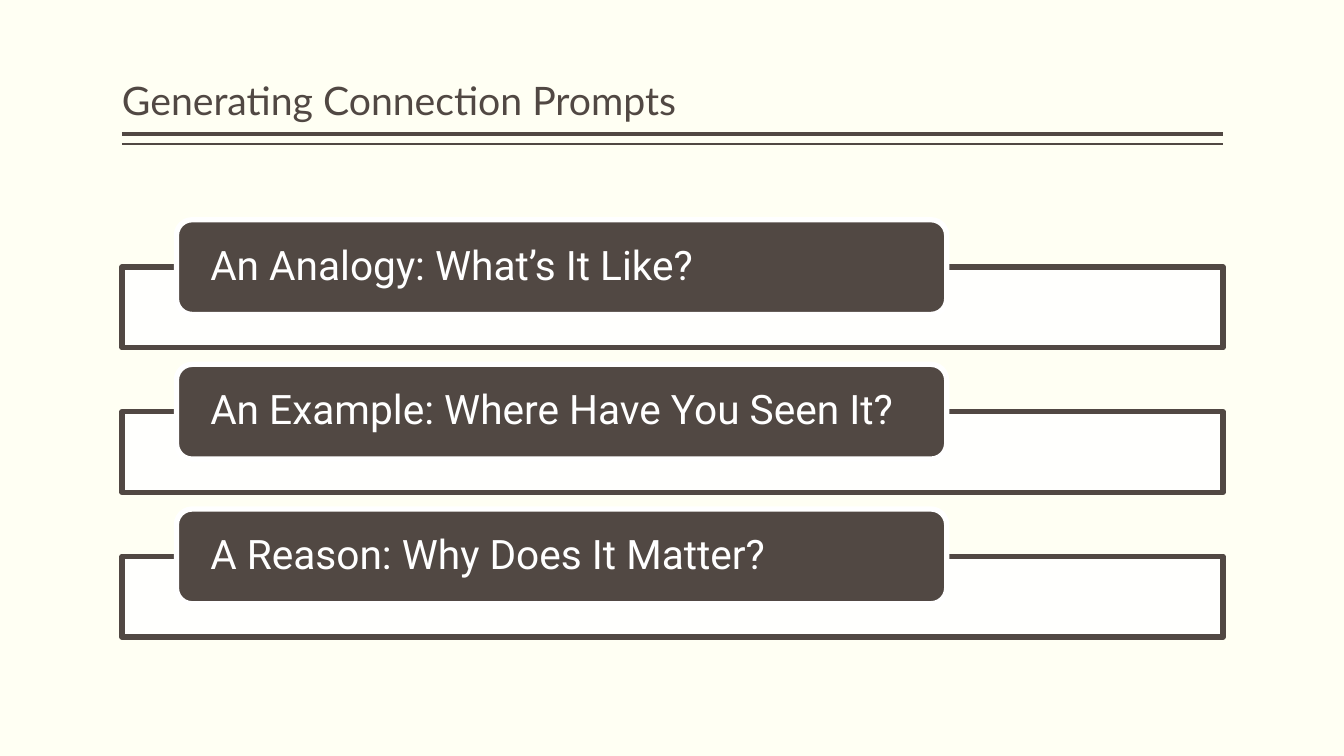
import dataclasses

import lxml.etree
import pptx
import pptx.dml.color
import pptx.enum.shapes
import pptx.enum.text
import pptx.oxml.ns
import pptx.shapes.autoshape
import pptx.slide
import pptx.text.text
import pptx.util

Inches = pptx.util.Inches
Pt = pptx.util.Pt
RGB = pptx.dml.color.RGBColor
Shape = pptx.enum.shapes.MSO_SHAPE
Anchor = pptx.enum.text.MSO_ANCHOR
qn = pptx.oxml.ns.qn


@dataclasses.dataclass(frozen=True)
class Theme:
    background: RGB = RGB(0xFF, 0xFF, 0xF3)
    dark: RGB = RGB(0x51, 0x48, 0x43)
    white: RGB = RGB(0xFF, 0xFF, 0xFF)
    title_font: str = "Lato"
    prompt_font: str = "Roboto"
    title_size: int = 28
    prompt_size: int = 29
    outline: float = 3.78


@dataclasses.dataclass(frozen=True)
class Rule:
    top: float
    weight: float


THEME = Theme()
LEFT, WIDTH = 1.21, 10.92
FIRST_TOP, PITCH = 2.18, 1.435
PANEL_DROP = 0.47
TITLE = "Generating Connection Prompts"
RULES = [Rule(1.33, 3), Rule(1.43, 1)]
PROMPTS = [
    "An Analogy: What’s It Like?",
    "An Example: Where Have You Seen It?",
    "A Reason: Why Does It Matter?",
]


def set_text(tf: pptx.text.text.TextFrame, text: str, font: str, size: int,
             color: RGB, anchor: Anchor, inset_x: float, inset_y: float) -> None:
    tf.word_wrap = True
    tf.vertical_anchor = anchor
    tf.margin_left = tf.margin_right = Inches(inset_x)
    tf.margin_top = tf.margin_bottom = Inches(inset_y)
    p = tf.paragraphs[0]
    p.text = text
    p.alignment = pptx.enum.text.PP_ALIGN.LEFT
    p.line_spacing = 0.9
    p.font.name = font
    p.font.size = Pt(size)
    p.font.color.rgb = color


def add_title(s: pptx.slide.Slide) -> None:
    box = s.shapes.add_textbox(Inches(LEFT), Inches(0.08), Inches(WIDTH), Inches(1.2))
    set_text(box.text_frame, TITLE, THEME.title_font, THEME.title_size,
             THEME.dark, Anchor.BOTTOM, 0, 0.05)


def add_rule(s: pptx.slide.Slide, rule: Rule) -> None:
    line = s.shapes.add_connector(
        pptx.enum.shapes.MSO_CONNECTOR.STRAIGHT,
        Inches(LEFT), Inches(rule.top), Inches(LEFT + WIDTH), Inches(rule.top))
    line.line.color.rgb = THEME.dark
    line.line.width = Pt(rule.weight)
    lxml.etree.SubElement(line._element.spPr, qn("a:effectLst"))


def add_block(s: pptx.slide.Slide, kind: Shape, left: float, top: float, width: float,
              height: float, fill: RGB, line: RGB) -> pptx.shapes.autoshape.Shape:
    sp = s.shapes.add_shape(kind, Inches(left), Inches(top), Inches(width), Inches(height))
    sp.shadow.inherit = False
    sp.fill.solid()
    sp.fill.fore_color.rgb = fill
    sp.line.color.rgb = line
    sp.line.width = Pt(THEME.outline)
    return sp


def add_prompt(s: pptx.slide.Slide, text: str, top: float) -> None:
    """Draw a translucent panel with the prompt's label over its upper edge."""
    panel = add_block(s, Shape.RECTANGLE, LEFT, top + PANEL_DROP, WIDTH, 0.8,
                      THEME.white, THEME.dark)
    color = panel._element.spPr.find(qn("a:solidFill")).find(qn("a:srgbClr"))
    lxml.etree.SubElement(color, qn("a:alpha"), val="90000")
    label = add_block(s, Shape.ROUNDED_RECTANGLE, 1.75, top, 7.64, 0.94,
                      THEME.dark, THEME.white)
    set_text(label.text_frame, text, THEME.prompt_font, THEME.prompt_size,
             THEME.white, Anchor.MIDDLE, 0.29, 0)


def main() -> None:
    prs = pptx.Presentation()
    prs.slide_width, prs.slide_height = Inches(13.33), Inches(7.5)
    s = prs.slides.add_slide(prs.slide_layouts[6])
    s.background.fill.solid()
    s.background.fill.fore_color.rgb = THEME.background
    for rule in RULES:
        add_rule(s, rule)
    add_title(s)
    for i, text in enumerate(PROMPTS):
        add_prompt(s, text, FIRST_TOP + i * PITCH)
    prs.save("out.pptx")


if __name__ == "__main__":
    main()
